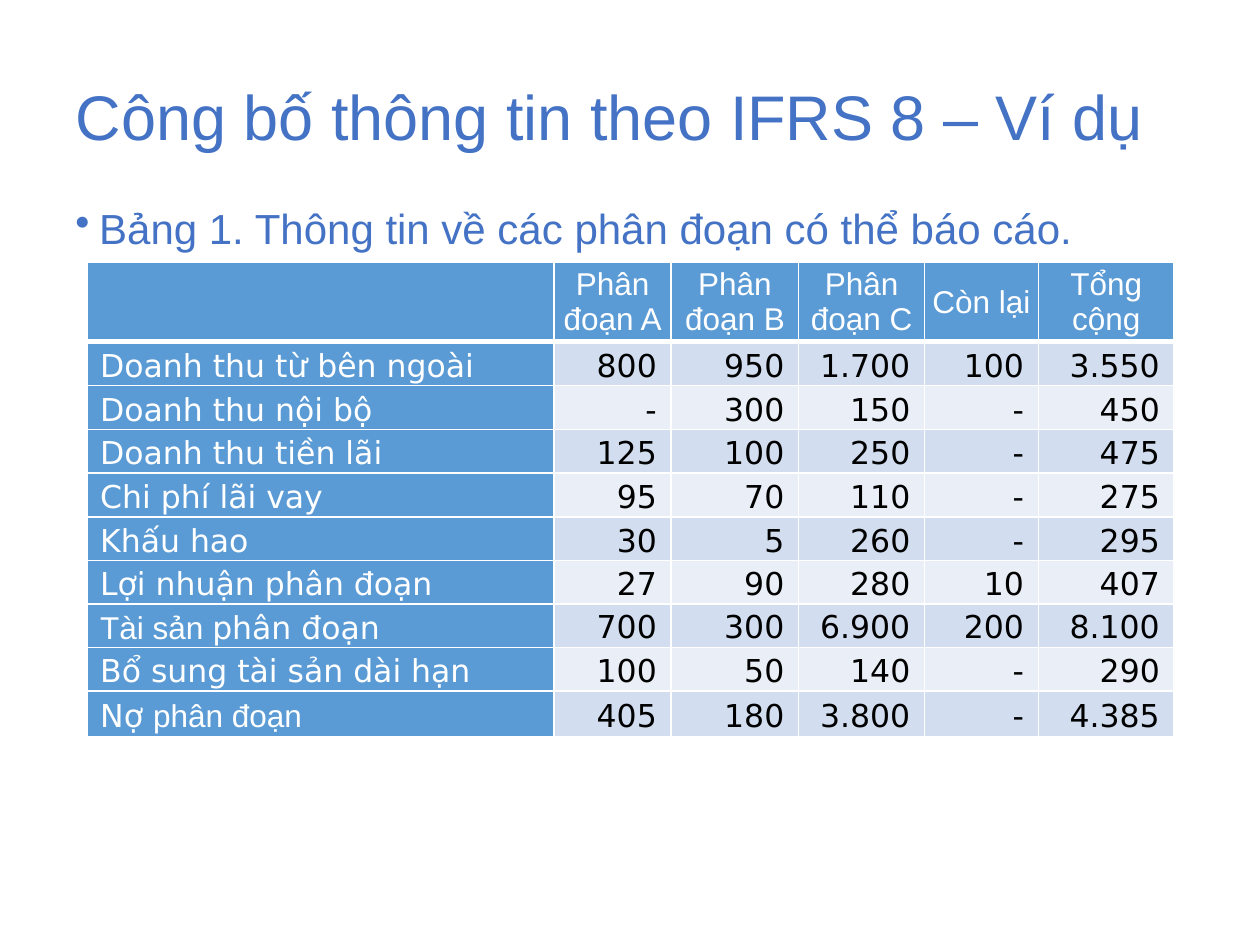
from dataclasses import dataclass

from lxml import etree
from pptx import Presentation
from pptx import util as u
from pptx.dml.color import RGBColor
from pptx.enum import text
from pptx.oxml.ns import qn


@dataclass(frozen=True)
class Theme:
    heading: str = "4472C4"
    header_fill: str = "5B9BD5"
    bands: tuple = ("D2DEEF", "EAEFF7")
    light: str = "FFFFFF"
    dark: str = "000000"
    font: str = "Arial"
    table_font: str = "DejaVu Sans"
    title_size: int = 36
    body_size: int = 24
    table_size: int = 18


COLUMN_WIDTHS = [9.42, 2.36, 2.57, 2.54, 2.29, 2.74]
ROW_HEIGHTS = [1.6, 0.58, 0.89, 0.81, 0.89, 0.84, 0.86, 0.84, 0.81, 0.91]
HEADERS = ["", "Phân đoạn A", "Phân đoạn B", "Phân đoạn C", "Còn lại", "Tổng cộng"]
TOP, MIDDLE, BOTTOM = (text.MSO_ANCHOR.TOP, text.MSO_ANCHOR.MIDDLE,
                       text.MSO_ANCHOR.BOTTOM)

# Each row: label runs as (text, font or None for the table font), values, anchor
SEGMENT_ROWS = [
    ([("Doanh thu từ bên ngoài", None)], "800 950 1.700 100 3.550", BOTTOM),
    ([("Doanh thu nội bộ", None)], "- 300 150 - 450", MIDDLE),
    ([("Doanh thu tiền lãi", None)], "125 100 250 - 475", TOP),
    ([("Chi phí lãi vay", None)], "95 70 110 - 275", MIDDLE),
    ([("Khấu hao", None)], "30 5 260 - 295", MIDDLE),
    ([("Lợi nhuận phân đoạn", None)], "27 90 280 10 407", MIDDLE),
    ([("Tài sản ", "Arial"), ("phân đoạn", None)], "700 300 6.900 200 8.100", TOP),
    ([("Bổ sung tài sản dài hạn", None)], "100 50 140 - 290", MIDDLE),
    ([("Nợ ", None), ("phân đoạn", "Arial")], "405 180 3.800 - 4.385", MIDDLE),
]


class SlideBuilder:
    def __init__(self, slide, theme):
        self.slide = slide
        self.theme = theme

    def style(self, paragraph, size, color, font, spacing=None, align=None):
        paragraph.font.size = u.Pt(size)
        paragraph.font.name = font
        paragraph.font.color.rgb = RGBColor.from_string(color)
        paragraph.line_spacing = spacing
        paragraph.alignment = align

    def indent(self, paragraph, left, first=0.0):
        properties = paragraph._p.get_or_add_pPr()
        properties.set("marL", str(u.Cm(left)))
        properties.set("indent", str(u.Cm(first)))
        return properties

    def title(self, words, left, top, width, height):
        shape = self.slide.shapes.title
        shape.left, shape.top = u.Cm(left), u.Cm(top)
        shape.width, shape.height = u.Cm(width), u.Cm(height)
        frame = shape.text_frame
        frame.text = words
        frame.auto_size = text.MSO_AUTO_SIZE.NONE
        frame.vertical_anchor = MIDDLE
        self.style(frame.paragraphs[0], self.theme.title_size, self.theme.heading,
                   self.theme.font, 0.9, text.PP_ALIGN.LEFT)

    def bullet(self, words, left, top, width, height):
        box = self.slide.shapes.add_textbox(
            u.Cm(left), u.Cm(top), u.Cm(width), u.Cm(height))
        frame = box.text_frame
        frame.word_wrap = True
        frame.text = words
        paragraph = frame.paragraphs[0]
        self.style(paragraph, self.theme.body_size, self.theme.heading,
                   self.theme.font, 1.14)
        paragraph.space_before = u.Pt(7.5)
        properties = self.indent(paragraph, 0.48, -0.48)
        mark = etree.Element(qn("a:buChar"), char="•")
        properties.find(qn("a:defRPr")).addprevious(mark)

    def borders(self, cell, bottom_width):
        properties = cell._tc.get_or_add_tcPr()
        widths = {"lnL": 1, "lnR": 1, "lnT": 1, "lnB": bottom_width}
        for position, (side, width) in enumerate(widths.items()):
            line = etree.Element(qn("a:" + side), w=str(u.Pt(width)))
            fill = etree.SubElement(line, qn("a:solidFill"))
            etree.SubElement(fill, qn("a:srgbClr"), val=self.theme.light)
            properties.insert(position, line)

    def cell(self, cell, runs, fill, color, font, align, anchor,
             spacing=None, right=0.02, bottom_width=1):
        cell.fill.solid()
        cell.fill.fore_color.rgb = RGBColor.from_string(fill)
        cell.vertical_anchor = anchor
        cell.margin_left, cell.margin_right = u.Cm(0.02), u.Cm(right)
        cell.margin_top = cell.margin_bottom = 0
        paragraph = cell.text_frame.paragraphs[0]
        for words, run_font in runs:
            run = paragraph.add_run()
            run.text = words
            if run_font:
                run.font.name = run_font
        self.style(paragraph, self.theme.table_size, color, font, spacing, align)
        self.borders(cell, bottom_width)
        return paragraph

    def table(self, headers, rows, widths, heights, left, top):
        theme = self.theme
        table = self.slide.shapes.add_table(
            len(heights), len(widths), u.Cm(left), u.Cm(top),
            u.Cm(sum(widths)), u.Cm(sum(heights))).table
        for column, width in zip(table.columns, widths):
            column.width = u.Cm(width)
        for row, height in zip(table.rows, heights):
            row.height = u.Cm(height)

        # Header row
        for number, words in enumerate(headers):
            self.cell(table.cell(0, number), [(words, None)] if words else [],
                      theme.header_fill, theme.light, theme.font,
                      text.PP_ALIGN.CENTER, MIDDLE, bottom_width=3)

        # Segment rows: label column, then banded figures
        for index, (label, values, anchor) in enumerate(rows):
            paragraph = self.cell(
                table.cell(index + 1, 0), label, theme.header_fill, theme.light,
                theme.table_font, text.PP_ALIGN.JUSTIFY, MIDDLE, 1.15)
            self.indent(paragraph, 0.25)
            for number, value in enumerate(values.split(), start=1):
                self.cell(table.cell(index + 1, number), [(value, None)],
                          theme.bands[index % 2], theme.dark, theme.table_font,
                          text.PP_ALIGN.RIGHT, anchor, 1.15, right=0.29)


def main():
    presentation = Presentation()
    presentation.slide_width, presentation.slide_height = u.Cm(25.4), u.Cm(19.05)
    title_only = presentation.slide_layouts.get_by_name("Title Only")
    builder = SlideBuilder(presentation.slides.add_slide(title_only), Theme())

    builder.title("Công bố thông tin theo IFRS 8 – Ví dụ", 1.27, 1.02, 22.38, 2.79)
    builder.bullet("Bảng 1. Thông tin về các phân đoạn có thể báo cáo.",
                   1.27, 3.81, 22.86, 13.44)
    builder.table(HEADERS, SEGMENT_ROWS, COLUMN_WIDTHS, ROW_HEIGHTS, 1.75, 5.29)
    presentation.save("out.pptx")


if __name__ == "__main__":
    main()
